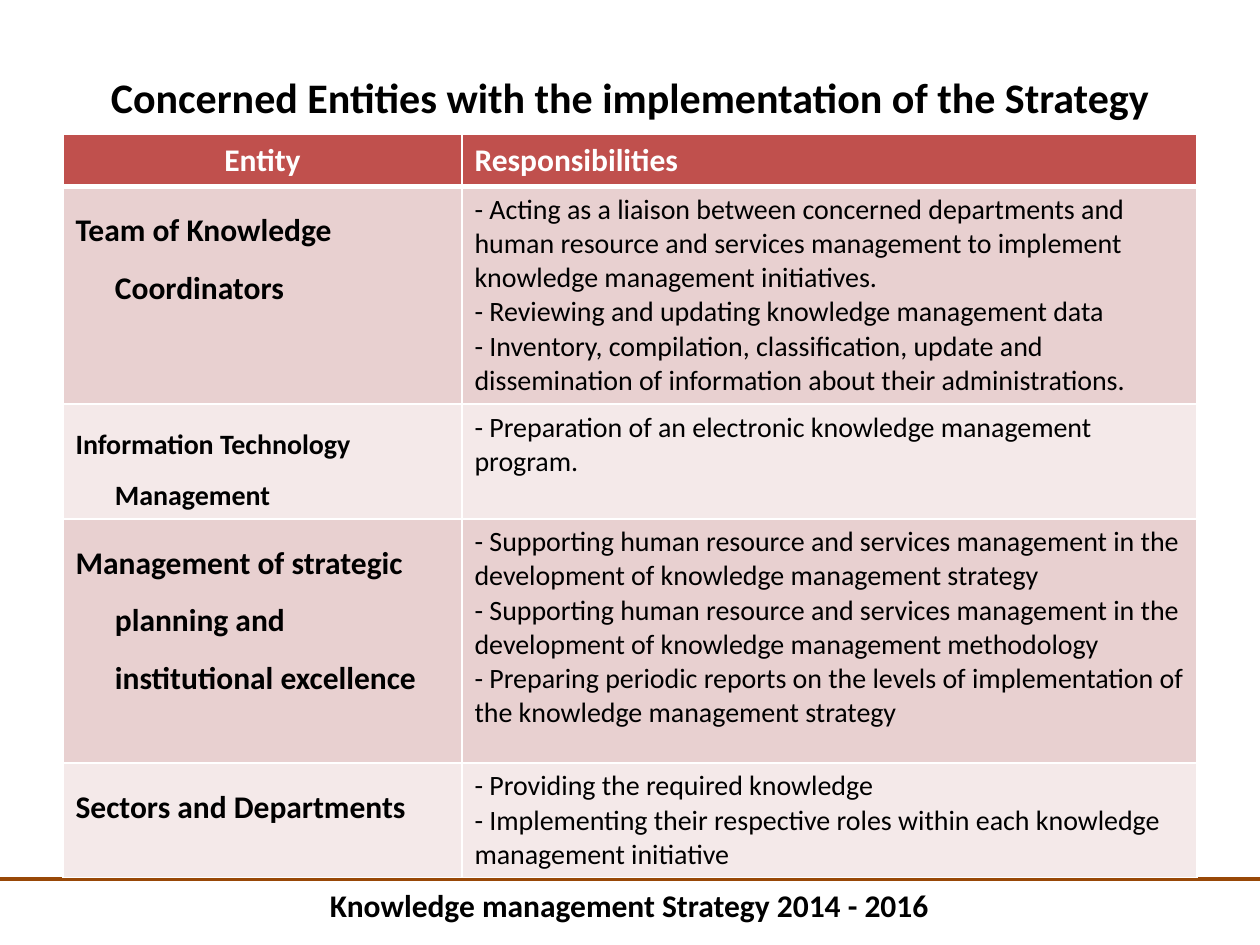
from lxml.etree import SubElement
from pptx import Presentation
from pptx.dml.color import RGBColor
from pptx.enum.shapes import MSO_CONNECTOR
from pptx.enum.text import MSO_ANCHOR, MSO_AUTO_SIZE, PP_ALIGN
from pptx.oxml.ns import qn
from pptx.util import Pt

BLACK, WHITE, BROWN = "000000", "FFFFFF", "984807"
HEADER_RED, BAND_DARK, BAND_LIGHT = "C0504D", "E8D0D0", "F4E9E9"

# Entity, size of its name, row height, responsibilities
ENTITIES = [
    ("Team of Knowledge Coordinators", 18, 124.5, [
        "- Acting as a liaison between concerned departments and human resource and "
        "services management to implement knowledge management initiatives.",
        "- Reviewing and updating knowledge management data",
        "- Inventory, compilation, classification, update and dissemination of "
        "information about their administrations."]),
    ("Information Technology Management", 16, 65.5, [
        "- Preparation of an electronic knowledge management program."]),
    ("Management of strategic planning and institutional excellence", 18, 139.5, [
        "- Supporting human resource and services management in the development of "
        "knowledge management strategy",
        "- Supporting human resource and services management in the development of "
        "knowledge management methodology",
        "- Preparing periodic reports on the levels of implementation of the "
        "knowledge management strategy"]),
    ("Sectors and Departments", 18, 65.5, [
        "- Providing the required knowledge",
        "- Implementing their respective roles within each knowledge management "
        "initiative"]),
]


def rgb(value):
    return RGBColor.from_string(value)


def write(frame, text, size=18, color=BLACK, bold=False, align=PP_ALIGN.LEFT,
          spacing=None, hanging=0):
    """Fill a text frame, one paragraph per line of text."""
    frame.text = text
    for paragraph in frame.paragraphs:
        if hanging:
            properties = paragraph._p.get_or_add_pPr()
            properties.set("marL", str(Pt(hanging)))
            properties.set("indent", str(-Pt(hanging)))
        paragraph.alignment = align
        paragraph.line_spacing = spacing
        for run in paragraph.runs:
            run.font.name = "Calibri"
            run.font.size = Pt(size)
            run.font.bold = bold
            run.font.color.rgb = rgb(color)


class Deck:
    def __init__(self, width, height):
        self.presentation = Presentation()
        self.presentation.slide_width = Pt(width)
        self.presentation.slide_height = Pt(height)
        self.slide = None

    def add_slide(self):
        self.slide = self.presentation.slides.add_slide(
            self.presentation.slide_layouts[5])

    def title(self, text, left, top, width, height, **style):
        title = self.slide.shapes.title
        title.left, title.top = Pt(left), Pt(top)
        title.width, title.height = Pt(width), Pt(height)
        title.text_frame.vertical_anchor = MSO_ANCHOR.MIDDLE
        write(title.text_frame, text, **style)

    def label(self, text, left, top, width, height, **style):
        label = self.slide.shapes.add_textbox(
            Pt(left), Pt(top), Pt(width), Pt(height))
        label.text_frame.word_wrap = False
        label.text_frame.auto_size = MSO_AUTO_SIZE.SHAPE_TO_FIT_TEXT
        write(label.text_frame, text, **style)

    def rule(self, left, right, y, color, weight):
        rule = self.slide.shapes.add_connector(
            MSO_CONNECTOR.STRAIGHT, Pt(left), Pt(y), Pt(right), Pt(y))
        rule.line.color.rgb = rgb(color)
        rule.line.width = Pt(weight)
        SubElement(rule._element.spPr, qn("a:effectLst"))

    def table(self, left, top, widths, heights):
        table = self.slide.shapes.add_table(
            len(heights), len(widths), Pt(left), Pt(top),
            Pt(sum(widths)), Pt(sum(heights))).table
        for column, width in zip(table.columns, widths):
            column.width = Pt(width)
        for row, height in zip(table.rows, heights):
            row.height = Pt(height)
        return table

    def cell(self, cell, text, fill, top_border=1, bottom_border=1, **style):
        write(cell.text_frame, text, **style)
        properties = cell._tc.get_or_add_tcPr()
        borders = {"lnL": 1, "lnR": 1, "lnT": top_border, "lnB": bottom_border}
        for side, weight in borders.items():
            border = SubElement(properties, qn(f"a:{side}"), w=str(Pt(weight)))
            SubElement(SubElement(border, qn("a:solidFill")),
                       qn("a:srgbClr"), val=WHITE)
        cell.fill.solid()
        cell.fill.fore_color.rgb = rgb(fill)


def main():
    deck = Deck(720, 540)
    deck.add_slide()

    # Footer
    deck.label("Knowledge management Strategy 2014 - 2016",
               181.5, 502.5, 360, 29, bold=True)
    deck.rule(0, 720, 502.5, BROWN, 2.25)

    # Title
    deck.title("Concerned Entities with the implementation of the Strategy",
               36, 21.6, 648, 67, size=24, bold=True, align=PP_ALIGN.CENTER)

    # Table header
    heights = [29.5] + [height for _, _, height, _ in ENTITIES]
    table = deck.table(36, 77, [228, 420], heights)
    header = {"fill": HEADER_RED, "bottom_border": 3, "color": WHITE, "bold": True}
    deck.cell(table.cell(0, 0), "Entity", align=PP_ALIGN.CENTER, **header)
    deck.cell(table.cell(0, 1), "Responsibilities", **header)

    # Entities and their responsibilities
    for row, (entity, size, _, duties) in enumerate(ENTITIES, start=1):
        band = {"fill": BAND_DARK if row % 2 else BAND_LIGHT,
                "top_border": 3 if row == 1 else 1}
        deck.cell(table.cell(row, 0), entity, size=size, bold=True,
                  spacing=1.5, hanging=22.5, **band)
        deck.cell(table.cell(row, 1), "\n".join(duties), size=16, **band)

    deck.presentation.save("out.pptx")


if __name__ == "__main__":
    main()
